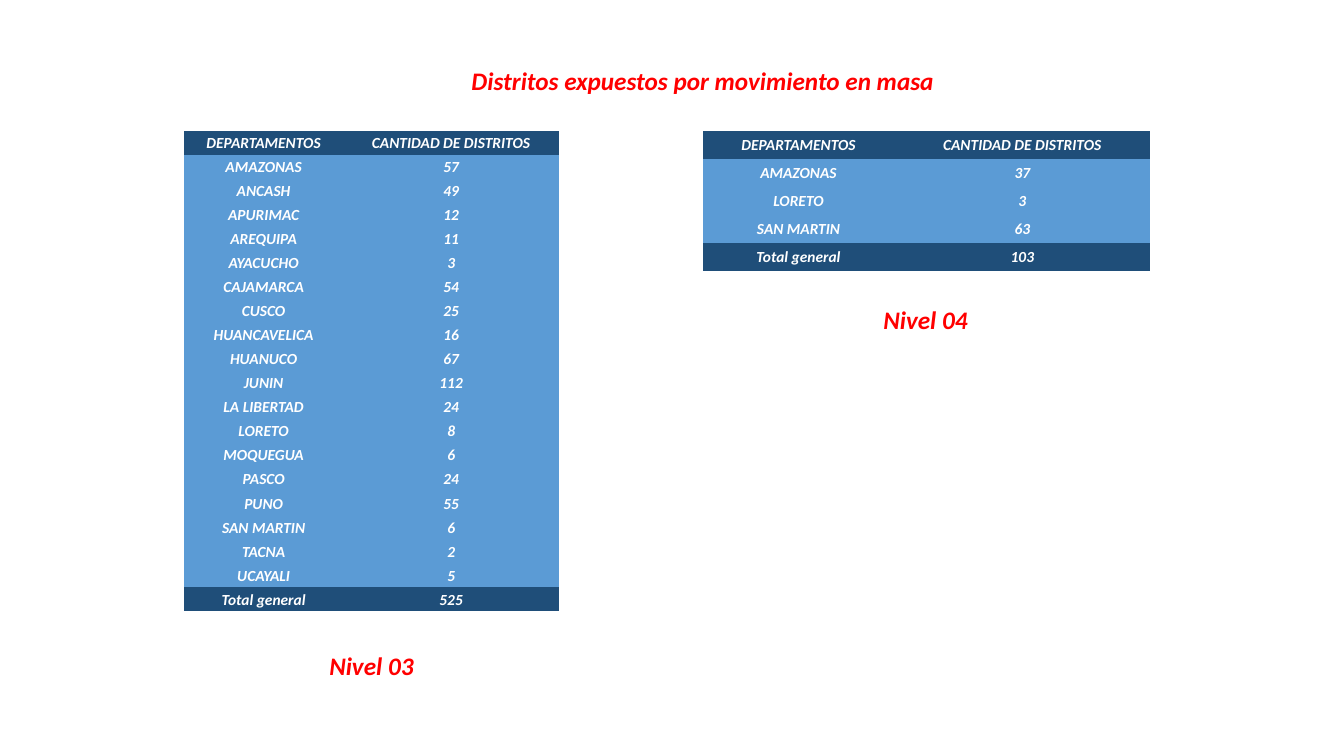
from dataclasses import dataclass

from pptx import Presentation
from pptx.dml.color import RGBColor
from pptx.enum.text import MSO_ANCHOR, MSO_AUTO_SIZE, PP_ALIGN
from pptx.oxml.ns import qn
from pptx.util import Inches, Pt

CENTER = PP_ALIGN.CENTER
MIDDLE = MSO_ANCHOR.MIDDLE
FIT_SHAPE = MSO_AUTO_SIZE.SHAPE_TO_FIT_TEXT
PLAIN_TABLE_STYLE = "{2D5ABB26-0587-4C30-8999-92F81FD0307C}"


@dataclass(frozen=True)
class Theme:
    font: str = "Calibri"
    heading: RGBColor = RGBColor(0xFF, 0x00, 0x00)
    cell_text: RGBColor = RGBColor(0xFF, 0xFF, 0xFF)
    band: RGBColor = RGBColor(0x1F, 0x4E, 0x79)
    body: RGBColor = RGBColor(0x5B, 0x9B, 0xD5)
    heading_size: int = 18
    cell_size: int = 11


THEME = Theme()

TITLE = ("Distritos expuestos por movimiento en masa", (4.55, 0.6, 4.84, 0.4))
HEADER = ("DEPARTAMENTOS", "CANTIDAD DE DISTRITOS")
TOTAL_LABEL = "Total general"
TABLES_TOP = 1.3
CELL_MARGIN = 0.01

LEVELS = [
    {
        "caption": ("Nivel 03", (3.15, 6.4, 1.07, 0.4)),
        "left": 1.82,
        "height": 4.77,
        "columns": (1.59, 2.13),
        "districts": [
            ("AMAZONAS", 57), ("ANCASH", 49), ("APURIMAC", 12),
            ("AREQUIPA", 11), ("AYACUCHO", 3), ("CAJAMARCA", 54),
            ("CUSCO", 25), ("HUANCAVELICA", 16), ("HUANUCO", 67),
            ("JUNIN", 112), ("LA LIBERTAD", 24), ("LORETO", 8),
            ("MOQUEGUA", 6), ("PASCO", 24), ("PUNO", 55),
            ("SAN MARTIN", 6), ("TACNA", 2), ("UCAYALI", 5),
        ],
        "total": 525,
    },
    {
        "caption": ("Nivel 04", (8.61, 2.97, 1.14, 0.4)),
        "left": 6.97,
        "height": 1.39,
        "columns": (1.9, 2.54),
        "districts": [("AMAZONAS", 37), ("LORETO", 3), ("SAN MARTIN", 63)],
        "total": 103,
    },
]


def write(text_frame, text, size, color):
    paragraph = text_frame.paragraphs[0]
    paragraph.alignment = CENTER
    run = paragraph.add_run()
    run.text = text
    run.font.name = THEME.font
    run.font.size = Pt(size)
    run.font.bold = run.font.italic = True
    run.font.color.rgb = color


def add_heading(slide, text, box, wrap):
    text_frame = slide.shapes.add_textbox(*map(Inches, box)).text_frame
    text_frame.word_wrap = wrap
    text_frame.auto_size = FIT_SHAPE
    write(text_frame, text, THEME.heading_size, THEME.heading)


def fill_cell(cell, text, color):
    cell.fill.solid()
    cell.fill.fore_color.rgb = color
    cell.vertical_anchor = MIDDLE
    cell.margin_left = cell.margin_right = cell.margin_top = Inches(CELL_MARGIN)
    cell.margin_bottom = 0
    write(cell.text_frame, text, THEME.cell_size, THEME.cell_text)


def add_level_table(slide, level):
    rows = [HEADER, *level["districts"], (TOTAL_LABEL, level["total"])]
    columns = level["columns"]
    frame = slide.shapes.add_table(
        len(rows), len(columns), Inches(level["left"]), Inches(TABLES_TOP),
        Inches(sum(columns)), Inches(level["height"]))
    for style in frame.element.iter(qn("a:tableStyleId")):
        style.text = PLAIN_TABLE_STYLE

    table = frame.table
    for column, width in zip(table.columns, columns):
        column.width = Inches(width)
    for r, values in enumerate(rows):
        table.rows[r].height = Inches(level["height"] / len(rows))
        color = THEME.band if r in (0, len(rows) - 1) else THEME.body
        for c, value in enumerate(values):
            fill_cell(table.cell(r, c), str(value), color)


def main():
    deck = Presentation()
    deck.slide_width, deck.slide_height = Inches(13.33), Inches(7.5)
    slide = deck.slides.add_slide(deck.slide_layouts[6])
    add_heading(slide, *TITLE, wrap=False)
    for level in LEVELS:
        add_heading(slide, *level["caption"], wrap=True)
        add_level_table(slide, level)
    deck.save("out.pptx")


if __name__ == "__main__":
    main()
